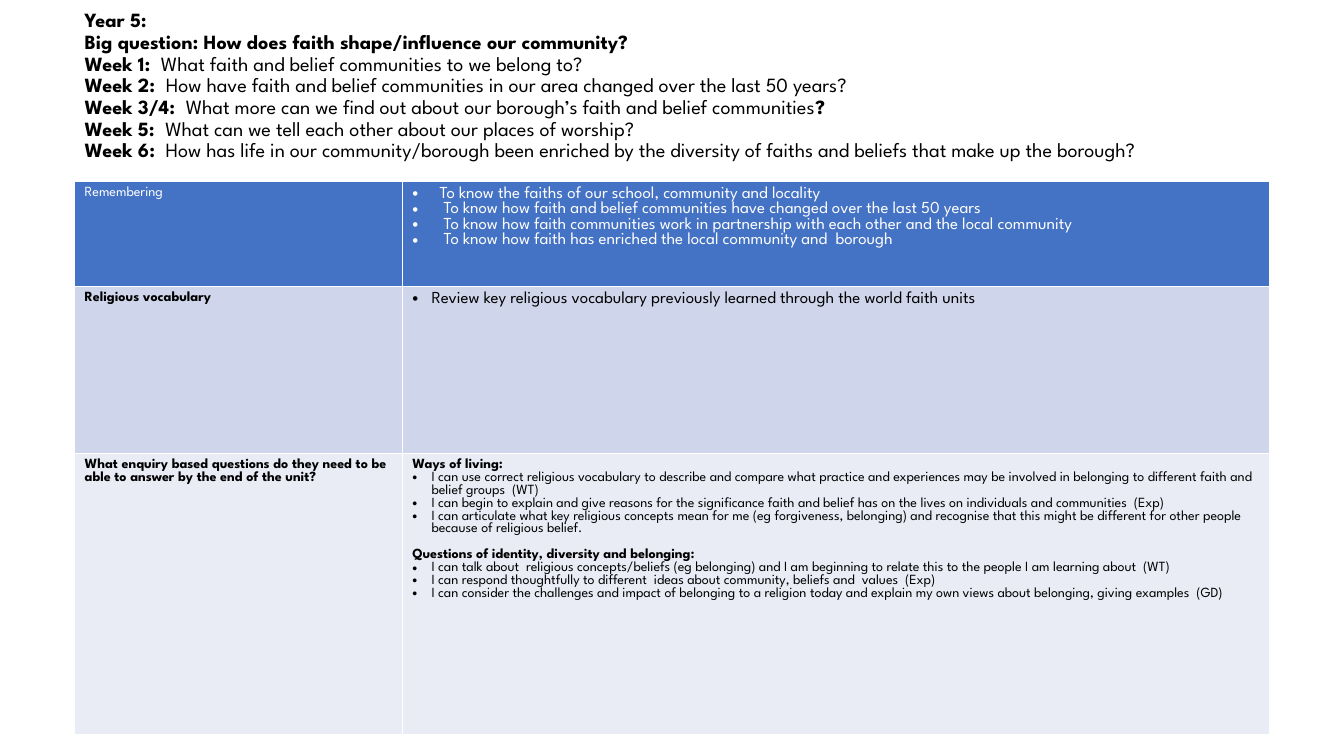
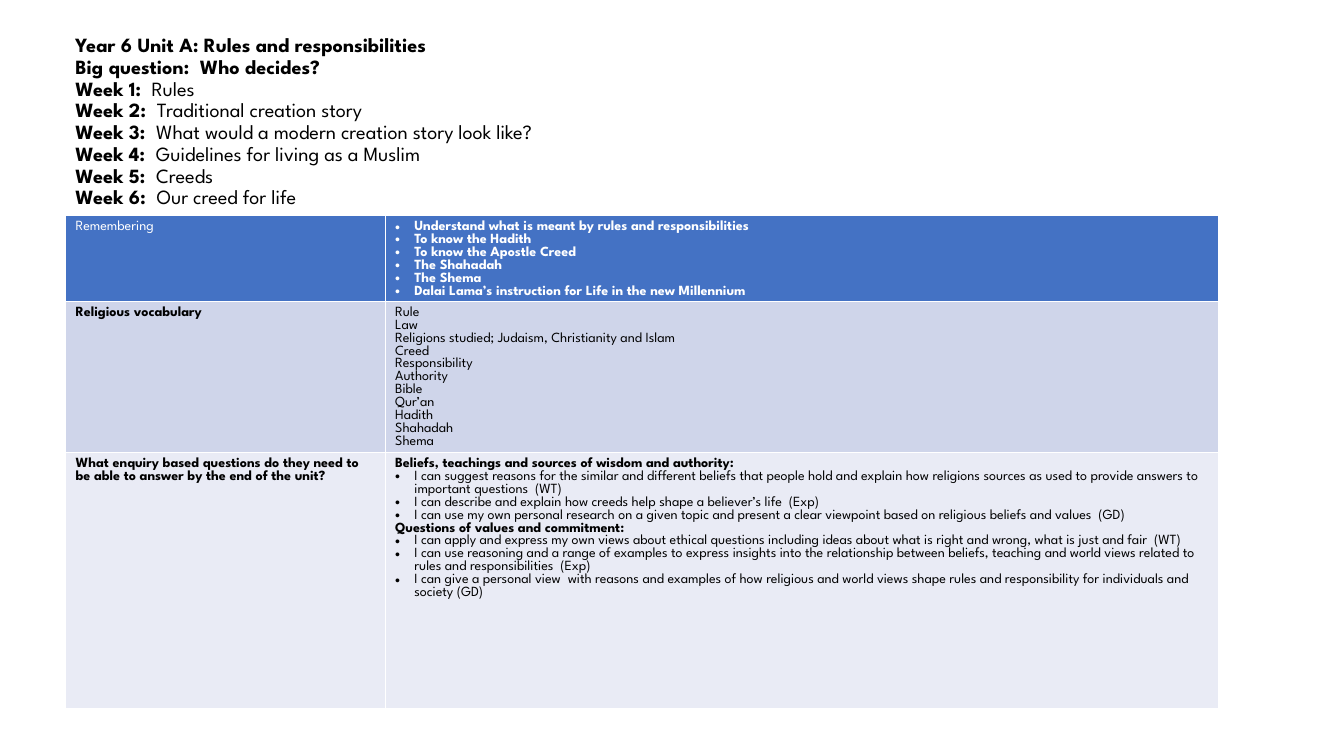
from lxml.etree import SubElement
from pptx import Presentation
from pptx.dml.color import RGBColor
from pptx.oxml.ns import qn
from pptx.util import Inches, Pt

FONT = "League Spartan"
COLORS = {"white": "FFFFFF", "black": "000000", "header": "4472C4",
          "band": "CFD5EA", "pale": "E9EBF5"}
ROW_STYLES = [("header", "white", False), ("band", "black", True), ("pale", "black", True)]
ROW_LABELS = ["Remembering", "Religious vocabulary",
              "What enquiry based questions do they need to be able to answer by the end of the unit?"]
TITLE_SIZE, TITLE_PITCH = 14.4, 15.5
LABEL_SIZE = 10
CELL_PITCH = 0.92
SECTION_GAP = 9.2
INDENT, WIDE_INDENT = 0.19, 0.31

SLIDES = [
    {
        "left": 0.74, "title_top": 0.05, "title_width": 11.55, "table_top": 1.8,
        "cols": [3.25, 8.6], "rows": [1.04, 1.66, 2.79],
        "title": [
            ("Year 5:",),
            ("Big question: How does faith shape/influence our community?",),
            ("Week 1:  ", "What faith and belief communities to we belong to?"),
            ("Week 2:  ", "How have faith and belief communities in our area changed over the last 50 years?"),
            ("Week 3/4:  ", "What more can we find out about our borough’s faith and belief communities", "?"),
            ("Week 5:  ", "What can we tell each other about our places of worship?"),
            ("Week 6:  ", "How has life in our community/borough been enriched by the diversity of faiths and beliefs that make up the borough?"),
        ],
        "body": [
            [{"size": 12, "indent": 0.27, "items": [
                "To know the faiths of our school, community and locality"]},
             {"size": 12, "indent": WIDE_INDENT, "items": [
                 "To know how faith and belief communities have changed over the last 50 years",
                 "To know how faith communities work in partnership with each other and the local community",
                 "To know how faith has enriched the local community and  borough"]}],
            [{"size": 12, "indent": INDENT, "items": [
                "Review key religious vocabulary previously learned through the world faith units"]}],
            [{"head": "Ways of living:", "indent": INDENT, "items": [
                "I can use correct religious vocabulary to describe and compare what practice and experiences may be involved in belonging to different faith and belief groups  (WT)",
                "I can begin to explain and give reasons for the significance faith and belief has on the lives on individuals and communities  (Exp)",
                "I can articulate what key religious concepts mean for me (eg forgiveness, belonging) and recognise that this might be different for other people because of religious belief."]},
             {"head": "Questions of identity, diversity and belonging:", "gap": SECTION_GAP,
              "indent": INDENT, "items": [
                  "I can talk about  religious concepts/beliefs (eg belonging) and I am beginning to relate this to the people I am learning about  (WT)",
                  "I can respond thoughtfully to different  ideas about community, beliefs and  values  (Exp)",
                  "I can consider the challenges and impact of belonging to a religion today and explain my own views about belonging, giving examples  (GD)"]}],
        ],
    },
    {
        "left": 0.65, "title_top": 0.3, "title_width": 11.25, "table_top": 2.14,
        "cols": [3.17, 8.27], "rows": [0.85, 1.5, 2.54],
        "title": [
            ("Year 6 Unit A: Rules and responsibilities",),
            ("Big question:  Who decides?",),
            ("Week 1: ", " Rules"),
            ("Week 2:  ", "Traditional creation story"),
            ("Week 3:  ", "What would a modern creation story look like?"),
            ("Week 4:  ", "Guidelines for living as a Muslim"),
            ("Week 5:  ", "Creeds"),
            ("Week 6:  ", "Our creed for life"),
        ],
        "body": [
            [{"bold": True, "indent": INDENT, "items": [
                "Understand what is meant by rules and responsibilities",
                "To know the Hadith", "To know the Apostle Creed", "The Shahadah", "The Shema",
                "Dalai Lama’s instruction for Life in the new Millennium"]}],
            [{"items": ["Rule", "Law", "Religions studied; Judaism, Christianity and Islam",
                        "Creed", "Responsibility", "Authority", "Bible", "Qur’an", "Hadith",
                        "Shahadah", "Shema"]}],
            [{"head": "Beliefs, teachings and sources of wisdom and authority:", "indent": INDENT, "items": [
                "I can suggest reasons for the similar and different beliefs that people hold and explain how religions sources as used to provide answers to important questions  (WT)",
                "I can describe and explain how creeds help shape a believer’s life  (Exp)",
                "I can use my own personal research on a given topic and present a clear viewpoint based on religious beliefs and values  (GD)"]},
             {"head": "Questions of values and commitment:", "indent": INDENT, "items": [
                 "I can apply and express my own views about ethical questions including ideas about what is right and wrong, what is just and fair  (WT)",
                 "I can use reasoning and a range of examples to express insights into the relationship between beliefs, teaching and world views related to rules and responsibilities  (Exp)",
                 "I can give a personal view  with reasons and examples of how religious and world views shape rules and responsibility for individuals and society (GD)"]}],
        ],
    },
]


def rgb(name):
    return RGBColor.from_string(COLORS[name])


def next_paragraph(tf, pitch):
    p = tf.add_paragraph() if tf.paragraphs[0].runs else tf.paragraphs[0]
    p.line_spacing = Pt(pitch)
    return p


def add_run(p, text, size, color, bold):
    r = p.add_run()
    r.text = text
    r.font.name, r.font.size, r.font.bold = FONT, Pt(size), bold
    r.font.color.rgb = rgb(color)


def set_bullet(p, indent):
    pPr = p._p.get_or_add_pPr()
    pPr.set("marL", str(Inches(indent)))
    pPr.set("indent", str(-Inches(indent)))
    SubElement(pPr, qn("a:buFont"), typeface="Arial")
    SubElement(pPr, qn("a:buChar"), char="•")


def style_cell(cell, fill):
    cell.margin_bottom = 0
    tcPr = cell._tc.get_or_add_tcPr()
    for side in ("lnL", "lnR", "lnT", "lnB"):
        ln = SubElement(tcPr, qn("a:" + side), w=str(Pt(1)))
        SubElement(SubElement(ln, qn("a:solidFill")), qn("a:srgbClr"), val=COLORS["white"])
    cell.fill.solid()
    cell.fill.fore_color.rgb = rgb(fill)


def add_title(s, unit):
    lines = unit["title"]
    height = Inches(0.1) + Pt(TITLE_PITCH * len(lines))
    box = s.shapes.add_textbox(Inches(unit["left"]), Inches(unit["title_top"]),
                               Inches(unit["title_width"]), height)
    tf = box.text_frame
    tf.word_wrap = True
    for line in lines:
        p = next_paragraph(tf, TITLE_PITCH)
        for i, text in enumerate(line):
            add_run(p, text, TITLE_SIZE, "black", i % 2 == 0)


def fill_body(tf, sections, color):
    for section in sections:
        size = section.get("size", LABEL_SIZE)
        pitch = size * CELL_PITCH
        if "head" in section:
            p = next_paragraph(tf, pitch)
            p.space_before = Pt(section.get("gap", 0))
            add_run(p, section["head"], size, color, True)
        for item in section["items"]:
            p = next_paragraph(tf, pitch)
            if "indent" in section:
                set_bullet(p, section["indent"])
            add_run(p, item, size, color, section.get("bold", False))


def add_unit_table(s, unit):
    cols, rows = unit["cols"], unit["rows"]
    table = s.shapes.add_table(len(rows), len(cols), Inches(unit["left"]), Inches(unit["table_top"]),
                               Inches(sum(cols)), Inches(sum(rows))).table
    for column, width in zip(table.columns, cols):
        column.width = Inches(width)
    for i, (fill, color, bold) in enumerate(ROW_STYLES):
        table.rows[i].height = Inches(rows[i])
        label, body = table.cell(i, 0), table.cell(i, 1)
        for cell in (label, body):
            style_cell(cell, fill)
        p = next_paragraph(label.text_frame, LABEL_SIZE * CELL_PITCH)
        add_run(p, ROW_LABELS[i], LABEL_SIZE, color, bold)
        fill_body(body.text_frame, unit["body"][i], color)


def main():
    prs = Presentation()
    prs.slide_width, prs.slide_height = Inches(13.33), Inches(7.5)
    for unit in SLIDES:
        s = prs.slides.add_slide(prs.slide_layouts[6])
        add_title(s, unit)
        add_unit_table(s, unit)
    prs.save("out.pptx")


if __name__ == "__main__":
    main()
